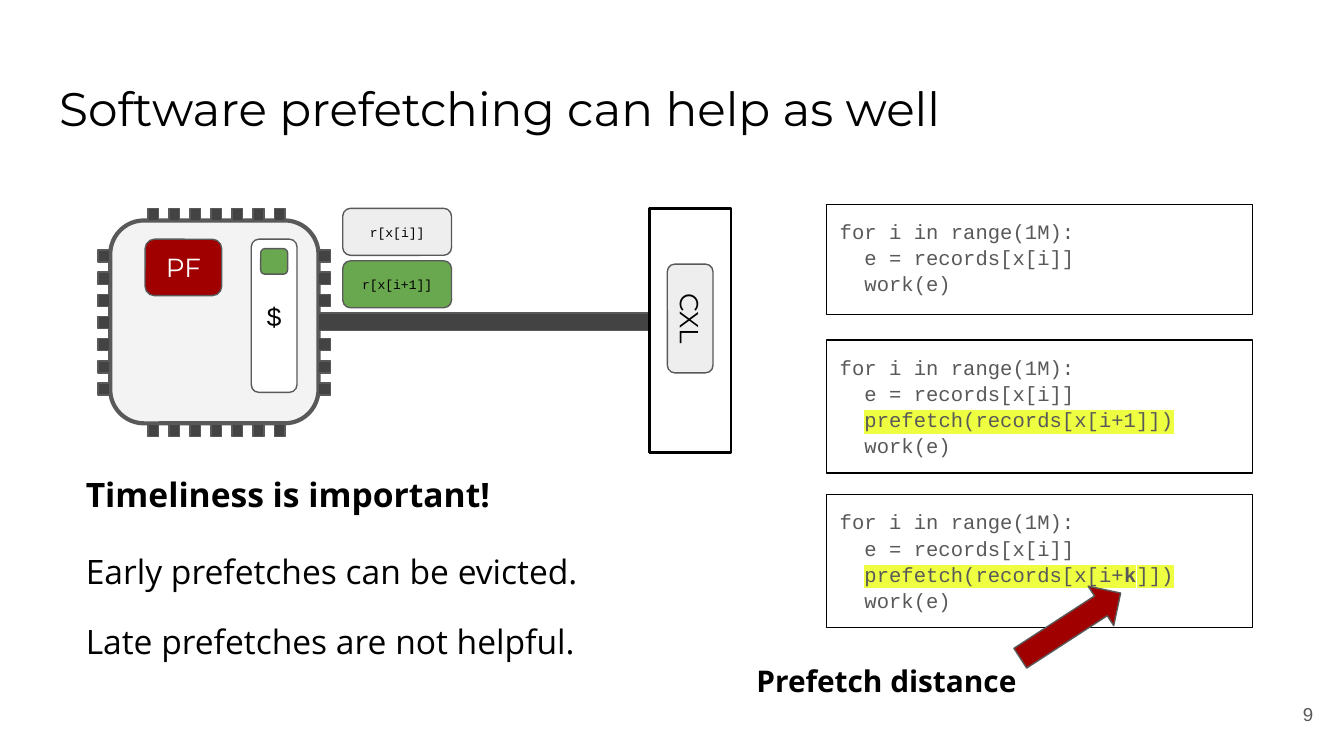
from lxml.etree import SubElement
from pptx import Presentation
from pptx.dml.color import RGBColor
from pptx.enum.shapes import MSO_SHAPE as Preset
from pptx.enum.text import MSO_ANCHOR as Anchor, MSO_AUTO_SIZE as AutoSize, PP_ALIGN as Align
from pptx.oxml.ns import qn
from pptx.util import Emu, Pt

PX = 9144
INSET = 10
BLACK = RGBColor(0x00, 0x00, 0x00)
WHITE = RGBColor(0xFF, 0xFF, 0xFF)
GRAY = RGBColor(0x59, 0x59, 0x59)
DARK = RGBColor(0x43, 0x43, 0x43)
CHIP = RGBColor(0xF3, 0xF3, 0xF3)
LIGHT = RGBColor(0xEE, 0xEE, 0xEE)
RED = RGBColor(0xA0, 0x00, 0x00)
GREEN = RGBColor(0x6A, 0xA8, 0x4F)
MARKER = "EEFF41"

TITLE = {"name": "Montserrat", "size": Pt(25.2)}
LABEL = {"name": "Montserrat", "size": Pt(14)}
CACHE = {"name": "Arial", "size": Pt(14)}
RECORD = {"name": "Courier New", "size": Pt(7)}
CODE = {"name": "Courier New", "size": Pt(11)}
BODY = {"name": "Open Sans", "size": Pt(18)}
STRONG = {**BODY, "bold": True}
CALLOUT = {**STRONG, "size": Pt(16)}
NUMBER = {"name": "Arial", "size": Pt(10)}


def apply(target, values):
    for name, value in values.items():
        setattr(target, name, value)


def emu(*lengths):
    return [Emu(round(length * PX)) for length in lengths]


def setup_frame(frame, anchor):
    margins = ("margin_left", "margin_top", "margin_right", "margin_bottom")
    apply(frame, {name: Emu(INSET * PX) for name in margins})
    apply(frame, {"word_wrap": True, "auto_size": AutoSize.NONE, "vertical_anchor": anchor})


def add_run(paragraph, text, style, color, marked=False):
    run = paragraph.add_run()
    run.text = text
    apply(run.font, style)
    run.font.color.rgb = color
    if marked:
        properties = run.font.fill._xPr
        highlight = SubElement(properties, qn("a:highlight"))
        SubElement(highlight, qn("a:srgbClr"), val=MARKER)
        properties.find(qn("a:latin")).addprevious(highlight)


def write(shape, text, style, color=BLACK, align=Align.LEFT, anchor=Anchor.TOP):
    frame = shape.text_frame
    setup_frame(frame, anchor)
    paragraph = frame.paragraphs[0]
    paragraph.alignment = align
    add_run(paragraph, text, style, color)


def add_block(slide, preset, box, fill, line=GRAY, width=0.75, text="", style=None,
              color=BLACK, rotation=0):
    shape = slide.shapes.add_shape(preset, *emu(*box))
    shape.shadow.inherit = False
    shape.rotation = rotation
    if fill is None:
        shape.fill.background()
    else:
        shape.fill.solid()
        shape.fill.fore_color.rgb = fill
    shape.line.color.rgb = line
    shape.line.width = Pt(width)
    if text:
        write(shape, text, style, color, Align.CENTER, Anchor.MIDDLE)
    return shape


def add_text(slide, box, text, style, **options):
    write(slide.shapes.add_textbox(*emu(*box)), text, style, **options)


def add_title(slide, box, text):
    title = slide.shapes.title
    apply(title, dict(zip(("left", "top", "width", "height"), emu(*box))))
    write(title, text, TITLE)


def add_chip(slide, box):
    left, top, width, height = box
    add_block(slide, Preset.ROUNDED_RECTANGLE, box, CHIP, width=2.25)
    for index in range(7):
        across = left + 28 + index * 94 / 6
        down = top + 22 + index * 16.5
        pins = [(across, edge, 8, 9) for edge in (top - 9, top + height + 1)]
        pins += [(edge, down, 9, 9) for edge in (left - 9, left + width)]
        for pin in pins:
            add_block(slide, Preset.RECTANGLE, pin, DARK)


def add_chip_parts(slide, box):
    left, top = box[:2]
    add_block(slide, Preset.ROUNDED_RECTANGLE, (left + 105, top + 14, 34, 114), WHITE,
              text="$", style=CACHE)
    add_block(slide, Preset.ROUNDED_RECTANGLE, (left + 112, top + 21, 20, 19), GREEN)
    add_block(slide, Preset.ROUNDED_RECTANGLE, (left + 26, top + 14, 57, 42), RED,
              text="PF", style=LABEL, color=WHITE)


def add_records(slide, box):
    left, top, width, height = box
    for index, (text, fill) in enumerate((("r[x[i]]", LIGHT), ("r[x[i+1]]", GREEN))):
        add_block(slide, Preset.ROUNDED_RECTANGLE, (left, top + index * 39, width, height),
                  fill, text=text, style=RECORD)


def add_memory(slide, box):
    left, top = box[:2]
    add_block(slide, Preset.RECTANGLE, box, WHITE, BLACK, 1.5)
    add_block(slide, Preset.ROUNDED_RECTANGLE, (left - 10, top + 65, 81, 34), LIGHT,
              text="CXL", style=LABEL, rotation=90)


def add_code(slide, box, prefetch=()):
    frame = add_block(slide, Preset.RECTANGLE, box, None, BLACK).text_frame
    setup_frame(frame, Anchor.TOP)
    lines = [["for i in range(1M):"], ["  e = records[x[i]]"], ["  work(e)"]]
    if prefetch:
        lines.insert(2, ["  ", *prefetch])
    for index, parts in enumerate(lines):
        paragraph = frame.add_paragraph() if index else frame.paragraphs[0]
        apply(paragraph, {"alignment": Align.LEFT, "line_spacing": 1.06})
        for position, part in enumerate(parts):
            style = {**CODE, "bold": part == "k"}
            add_run(paragraph, part, style, GRAY, marked=position > 0)


def add_statements(slide, box):
    left, top, width, height = box
    statements = (
        (0, "Timeliness is important!", STRONG),
        (57, "Early prefetches can be evicted.", BODY),
        (109, "Late prefetches are not helpful.", BODY),
    )
    for offset, text, style in statements:
        add_text(slide, (left, top + offset, width, height), text, style)


def add_callout(slide, box):
    left, top = box[:2]
    add_block(slide, Preset.RIGHT_ARROW, (left + 199, top - 35, 89, 35), RED, rotation=327)
    add_text(slide, box, "Prefetch distance", CALLOUT)


def main():
    presentation = Presentation()
    apply(presentation, dict(zip(("slide_width", "slide_height"), emu(1000, 562.5))))
    slide = presentation.slides.add_slide(presentation.slide_layouts[5])
    chip = (82, 164, 155, 151)
    add_title(slide, (34, 49, 932, 63), "Software prefetching can help as well")
    add_chip(slide, chip)
    add_block(slide, Preset.RECTANGLE, (237, 233, 246, 13), DARK)
    add_chip_parts(slide, chip)
    add_records(slide, (255, 155, 81, 35))
    add_memory(slide, (483, 155, 61, 182))
    add_code(slide, (615, 152, 317, 82))
    add_code(slide, (615, 253, 317, 99), ["prefetch(records[x[i+1]])"])
    add_code(slide, (615, 368, 317, 99), ["prefetch(records[x[i+", "k", "]])"])
    add_statements(slide, (54, 343, 533, 50))
    add_callout(slide, (553, 483, 391, 47))
    add_text(slide, (927, 510, 60, 43), "9", NUMBER, color=GRAY,
             align=Align.RIGHT, anchor=Anchor.MIDDLE)
    presentation.save("out.pptx")


if __name__ == "__main__":
    main()
